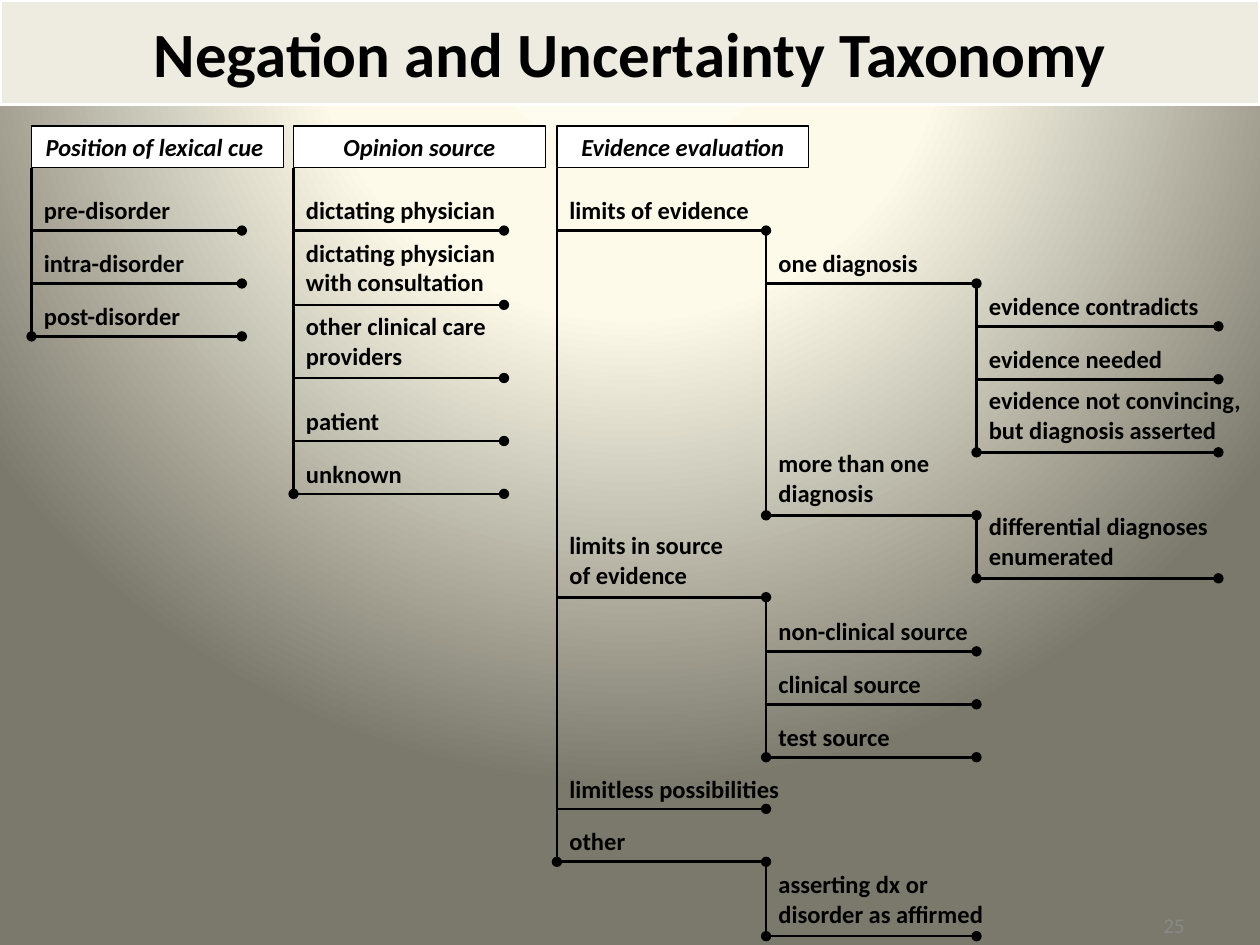
from pptx import Presentation
from pptx.dml.color import RGBColor
from pptx.enum.shapes import MSO_CONNECTOR as Connector, MSO_SHAPE as Shape
from pptx.enum.text import MSO_ANCHOR as Anchor, MSO_AUTO_SIZE as AutoSize, PP_ALIGN as Align
from pptx.oxml import parse_xml
from pptx.oxml.ns import nsdecls
from pptx.util import Inches, Pt
from lxml.etree import SubElement
from pptx.oxml.ns import qn

COLORS = {
    "ink": "000000", "white": "FFFFFF", "banner": "EEECE1", "number": "898989",
    "glow": "FEFCEE", "cream": "FDFAEA", "olive": "7B796B",
}
LABEL = {"name": "Calibri", "size": Pt(14), "bold": True}
HEADER = {**LABEL, "italic": True}
TITLE = {**LABEL, "size": Pt(36)}
NUMBER = {"name": "Calibri", "size": Pt(12)}
ROW_HEIGHT = {1: 0.34, 2: 0.57}
ROW_RISE = {1: 0.33, 2: 0.58}

HEADERS = [
    ("Position of lexical cue ", 0.25),
    ("Opinion source", 2.33),
    ("Evidence evaluation", 4.42),
]
# Each branch: left, top, right end of its twigs, label width, (text, line y, rows)
BRANCHES = [
    (0.25, 1.33, 1.92, 1.42, [
        ("pre-disorder", 1.83, 1), ("intra-disorder", 2.25, 1), ("post-disorder", 2.67, 1)]),
    (2.33, 1.33, 4, 1.75, [
        ("dictating physician", 1.83, 1),
        ("dictating physician with consultation", 2.42, 2),
        ("other clinical care providers", 3, 2),
        ("patient", 3.5, 1), ("unknown", 3.92, 1)]),
    (4.42, 1.33, 6.08, 2.08, [
        ("limits of evidence", 1.83, 1), ("limits in source\nof evidence", 4.74, 2),
        ("limitless possibilities", 6.42, 1), ("other", 6.84, 1)]),
    (6.08, 1.83, 7.75, 1.83, [
        ("one diagnosis", 2.25, 1), ("more than one diagnosis", 4.09, 2)]),
    (6.08, 4.74, 7.75, 1.83, [
        ("non-clinical source", 5.17, 1), ("clinical source", 5.59, 1), ("test source", 6.01, 1)]),
    (6.08, 6.84, 7.75, 1.83, [("asserting dx or disorder as affirmed", 7.43, 2)]),
    (7.75, 2.25, 9.67, 2.33, [
        ("evidence contradicts", 2.59, 1), ("evidence needed", 3.01, 1),
        ("evidence not convincing, but diagnosis asserted", 3.59, 2)]),
    (7.75, 4.09, 9.67, 2.08, [("differential diagnoses enumerated", 4.59, 2)]),
]


def rgb(name):
    """Return the named colour."""
    return RGBColor.from_string(COLORS[name])


def set_background(slide):
    """Give the slide a radial gradient centred above its top edge."""
    stops = "".join(
        f'<a:gs pos="{position}"><a:srgbClr val="{COLORS[name]}"/></a:gs>'
        for position, name in [(0, "glow"), (40000, "cream"), (100000, "olive")])
    background = parse_xml(
        f'<p:bg {nsdecls("p", "a")}><p:bgPr><a:gradFill rotWithShape="1">'
        f'<a:gsLst>{stops}</a:gsLst><a:path path="circle">'
        '<a:fillToRect l="50000" t="-80000" r="50000" b="180000"/></a:path>'
        '</a:gradFill><a:effectLst/></p:bgPr></p:bg>')
    slide.element.cSld.insert(0, background)


def write_text(shape, text, style, align=Align.LEFT, color="ink"):
    """Put styled, wrapped text into a shape."""
    frame = shape.text_frame
    frame.word_wrap = True
    frame.text = text
    for paragraph in frame.paragraphs:
        paragraph.alignment = align
        for run in paragraph.runs:
            for key, value in style.items():
                setattr(run.font, key, value)
            run.font.color.rgb = rgb(color)
    return frame


def add_label(slide, text, box, style=LABEL, align=Align.LEFT, color="ink"):
    """Add a text box that grows with its text."""
    label = slide.shapes.add_textbox(*map(Inches, box))
    write_text(label, text, style, align, color).auto_size = AutoSize.SHAPE_TO_FIT_TEXT


def add_box(slide, text, box, style, fill, line, weight):
    """Add an outlined rectangle with centred text."""
    shape = slide.shapes.add_shape(Shape.RECTANGLE, *map(Inches, box))
    shape.shadow.inherit = False
    shape.fill.solid()
    shape.fill.fore_color.rgb = rgb(fill)
    shape.line.color.rgb = rgb(line)
    shape.line.width = Pt(weight)
    write_text(shape, text, style, Align.CENTER).vertical_anchor = Anchor.MIDDLE


def add_dotted_end_line(slide, *ends):
    """Add a straight line that ends in a dot."""
    line = slide.shapes.add_connector(Connector.STRAIGHT, *map(Inches, ends))
    line.line.color.rgb = rgb("ink")
    line.line.width = Pt(1.5)
    SubElement(line.line._get_or_add_ln(), qn("a:tailEnd"), type="oval")
    SubElement(line.element.spPr, qn("a:effectLst"))


def add_branch(slide, left, top, right, width, leaves):
    """Add a vertical stem with one labelled twig for each leaf."""
    add_dotted_end_line(slide, left, top, left, leaves[-1][1])
    for text, y, rows in leaves:
        add_dotted_end_line(slide, left, y, right, y)
        add_label(slide, text, (left, y - ROW_RISE[rows], width, ROW_HEIGHT[rows]))


def main():
    """Build the taxonomy slide."""
    presentation = Presentation()
    presentation.slide_width, presentation.slide_height = Inches(10), Inches(7.5)
    slide = presentation.slides.add_slide(presentation.slide_layouts[6])
    set_background(slide)
    for text, left in HEADERS:
        add_box(slide, text, (left, 1, 2, 0.33), HEADER, "white", "ink", 0.75)
    for branch in BRANCHES:
        add_branch(slide, *branch)
    add_box(slide, "Negation and Uncertainty Taxonomy", (0, 0, 10, 0.83),
            TITLE, "banner", "white", 2)
    add_label(slide, "25", (7.17, 7.19, 2.33, 0.3), NUMBER, Align.RIGHT, "number")
    presentation.save("out.pptx")


if __name__ == "__main__":
    main()
